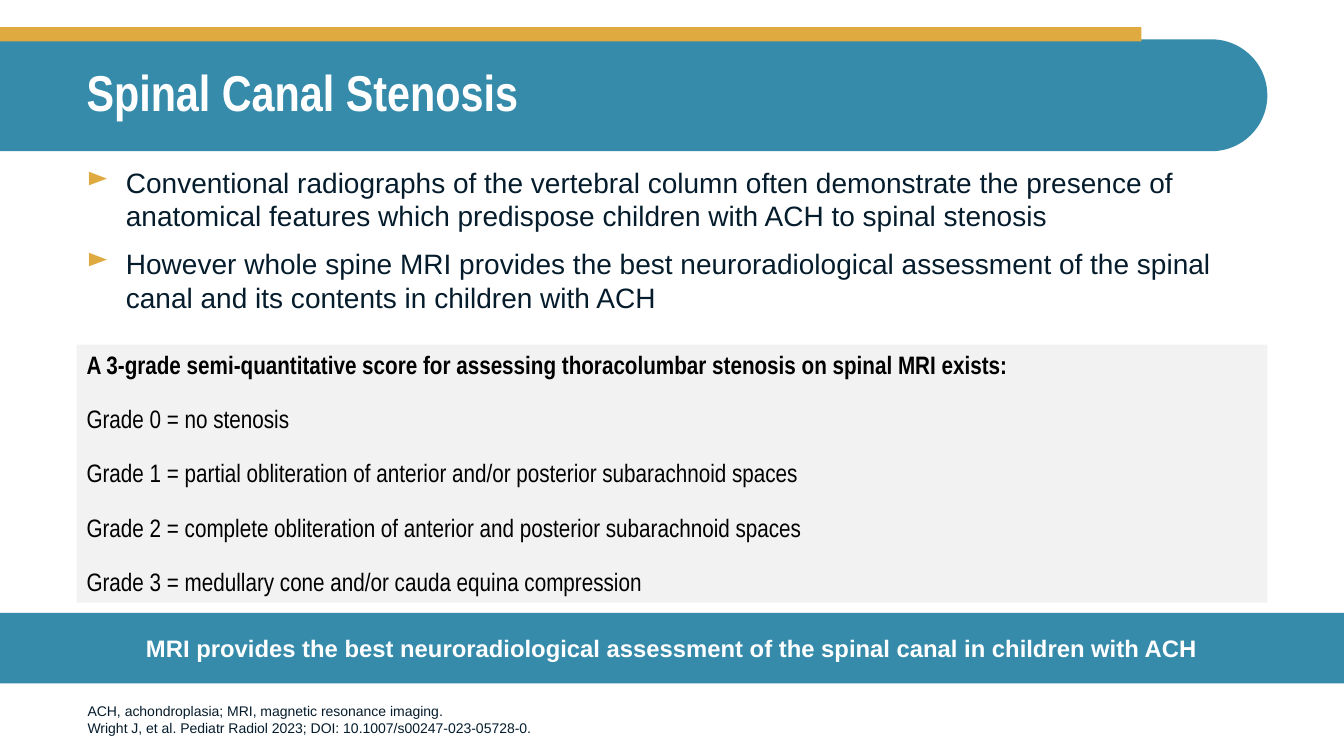
import pptx
import pptx.util
import pptx.dml.color
import pptx.enum.shapes
import pptx.enum.text
import lxml.etree

Inches = pptx.util.Inches
Pt = pptx.util.Pt
RGBColor = pptx.dml.color.RGBColor
SHAPE = pptx.enum.shapes.MSO_SHAPE
ANCHOR = pptx.enum.text.MSO_ANCHOR
ALIGN = pptx.enum.text.PP_ALIGN

TEAL = RGBColor(0x36, 0x8B, 0xAB)
GOLD = RGBColor(0xDF, 0xAA, 0x40)
GREY = RGBColor(0xF2, 0xF2, 0xF2)
NAVY = RGBColor(0x05, 0x1C, 0x2C)
WHITE = RGBColor(0xFF, 0xFF, 0xFF)
BLACK = RGBColor(0, 0, 0)

POINTS = [
    "Conventional radiographs of the vertebral column often demonstrate the presence of "
    "anatomical features which predispose children with ACH to spinal stenosis",
    "However whole spine MRI provides the best neuroradiological assessment of the spinal "
    "canal and its contents in children with ACH",
]
SCORE = "A 3-grade semi-quantitative score for assessing thoracolumbar stenosis on spinal MRI exists:"
GRADES = [
    "no stenosis",
    "partial obliteration of anterior and/or posterior subarachnoid spaces",
    "complete obliteration of anterior and posterior subarachnoid spaces",
    "medullary cone and/or cauda equina compression",
]
NOTES = [
    "ACH, achondroplasia; MRI, magnetic resonance imaging.",
    "Wright J, et al. Pediatr Radiol 2023; DOI: 10.1007/s00247-023-05728-0.",
]


def apply(item, form):
    for name, value in form.items():
        setattr(item, name, value)


def style(font, color, form):
    apply(font, form)
    font.color.rgb = color


def add_block(slide, kind, box, fill):
    shape = slide.shapes.add_shape(kind, *map(Inches, box))
    shape.shadow.inherit = False
    shape.fill.solid()
    shape.fill.fore_color.rgb = fill
    shape.line.fill.background()
    return shape


def add_box(slide, box):
    return slide.shapes.add_textbox(*map(Inches, box))


def add_mark(para):
    props = para._p.get_or_add_pPr()
    props.set("marL", str(Inches(0.39)))
    props.set("indent", str(-Inches(0.39)))
    tint = lxml.etree.SubElement(props, pptx.oxml.ns.qn("a:buClr"))
    lxml.etree.SubElement(tint, pptx.oxml.ns.qn("a:srgbClr"), val=str(GOLD))
    lxml.etree.SubElement(props, pptx.oxml.ns.qn("a:buChar"), char="►")


def write(shape, lines, color, font, frame=None, para=None, gap=0, mark=False):
    body = shape.text_frame
    apply(body, {"word_wrap": True, "vertical_anchor": ANCHOR.TOP, **(frame or {})})
    for index, line in enumerate(lines):
        item = body.paragraphs[0] if index == 0 else body.add_paragraph()
        apply(item, {"alignment": ALIGN.LEFT, **(para or {})})
        if index and gap:
            item.space_before = Pt(gap)
        if mark:
            add_mark(item)
        run = item.add_run()
        run.text = line
        style(run.font, color, font)
    return body


def main():
    deck = pptx.Presentation()
    apply(deck, {"slide_width": Inches(13.33), "slide_height": Inches(7.5)})
    slide = deck.slides.add_slide(deck.slide_layouts[6])

    band = add_block(slide, SHAPE.ROUND_2_SAME_RECTANGLE, (5.73, -5.34, 1.11, 12.57), TEAL)
    band.rotation = 270
    band.adjustments[0] = 0
    band.adjustments[1] = 0.5
    add_block(slide, SHAPE.RECTANGLE, (0, 0.27, 11.32, 0.14), GOLD)

    write(add_box(slide, (0.76, 0.39, 11.81, 1.1)), ["Spinal Canal Stenosis"], WHITE,
          {"name": "Arial Narrow", "size": Pt(36), "bold": True},
          {"vertical_anchor": ANCHOR.MIDDLE}, {"line_spacing": 0.9})
    write(add_box(slide, (0.76, 1.59, 11.81, 1.75)), POINTS, NAVY,
          {"name": "Arial", "size": Pt(20)}, gap=10, mark=True)
    write(add_box(slide, (0.77, 6.79, 9.88, 0.56)), NOTES, NAVY,
          {"name": "Arial", "size": Pt(10)}, {"vertical_anchor": ANCHOR.BOTTOM})

    strip = add_block(slide, SHAPE.RECTANGLE, (0, 6.08, 13.33, 0.7), TEAL)
    write(strip, ["MRI provides the best neuroradiological assessment of the spinal canal in children with ACH"],
          WHITE, {"name": "Arial", "size": Pt(17), "bold": True},
          {"vertical_anchor": ANCHOR.MIDDLE, "margin_left": Inches(0.79), "margin_right": Inches(0.79)},
          {"alignment": ALIGN.CENTER})

    panel = add_block(slide, SHAPE.RECTANGLE, (0.76, 3.42, 11.81, 2.56), GREY)
    grades = [f"Grade {rank} = {text}" for rank, text in enumerate(GRADES)]
    body = write(panel, [SCORE, *grades], BLACK, {"name": "Arial Narrow", "size": Pt(18)}, gap=17)
    body.paragraphs[0].runs[0].font.bold = True

    deck.save("out.pptx")


if __name__ == "__main__":
    main()
